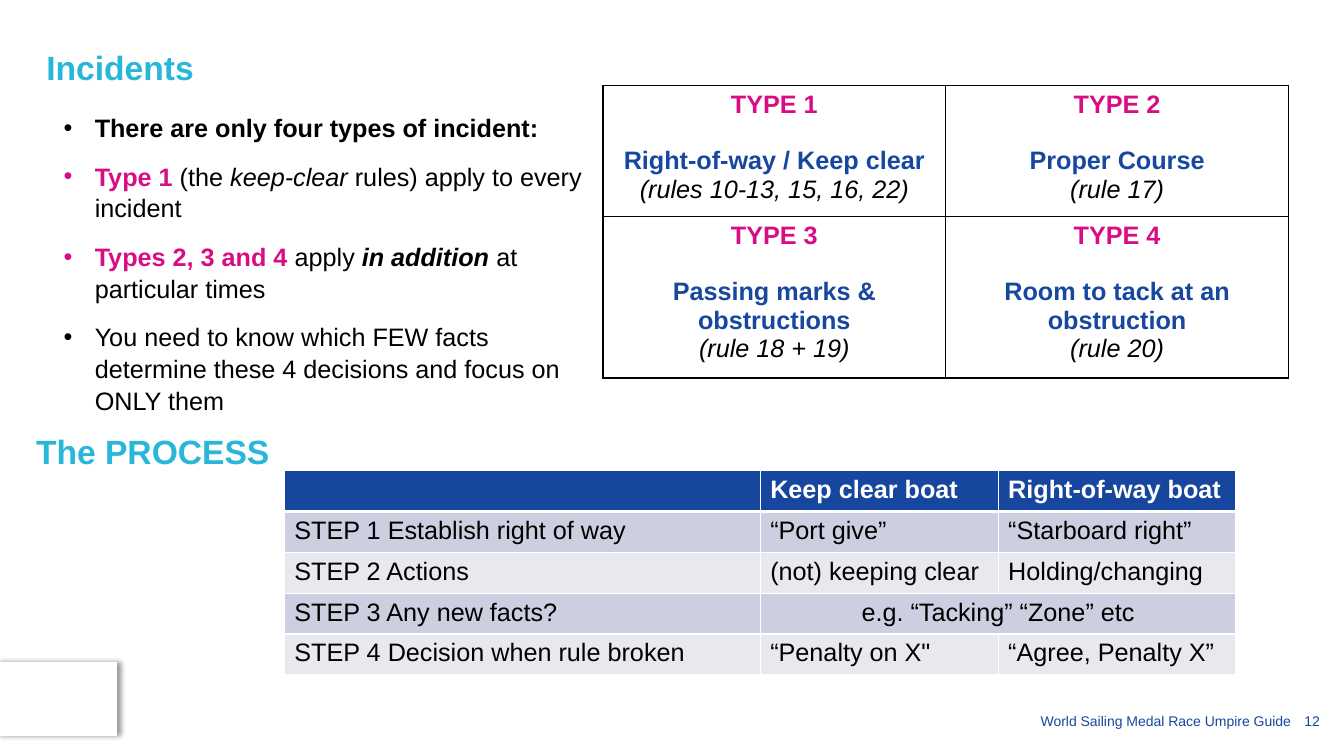
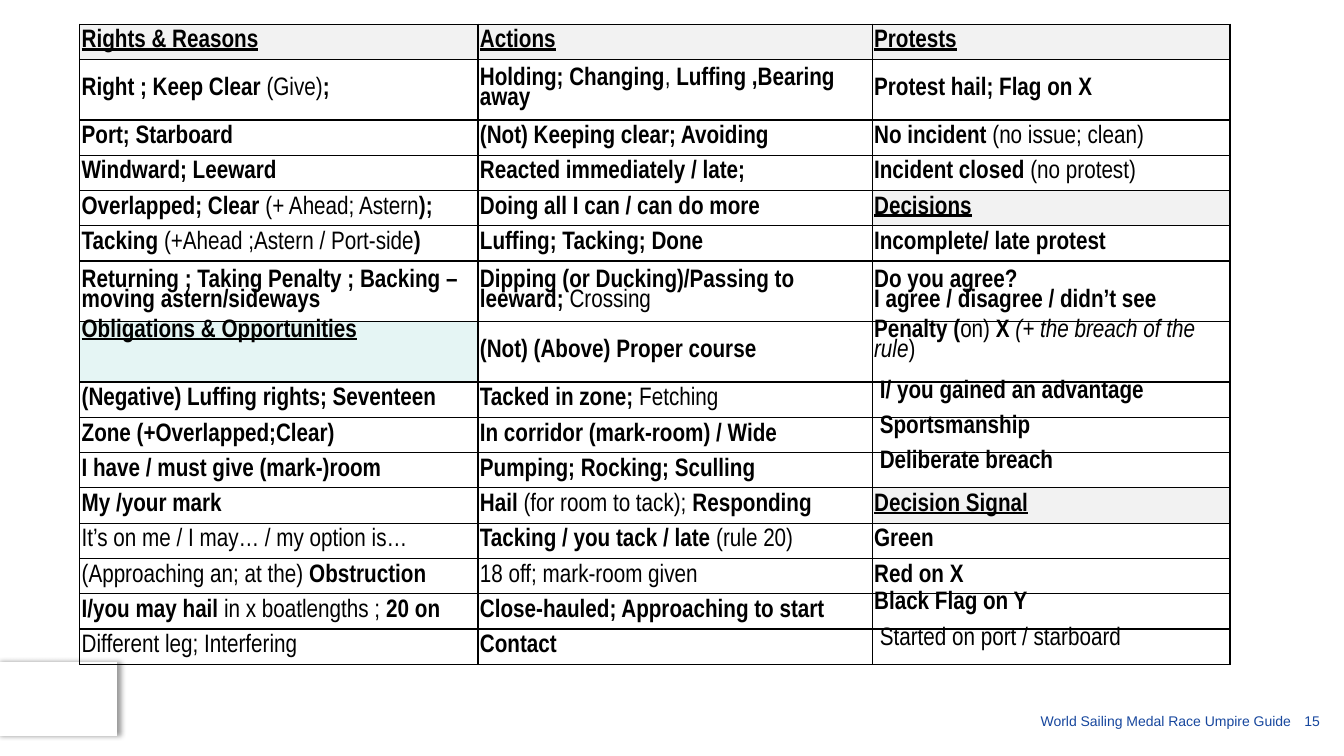
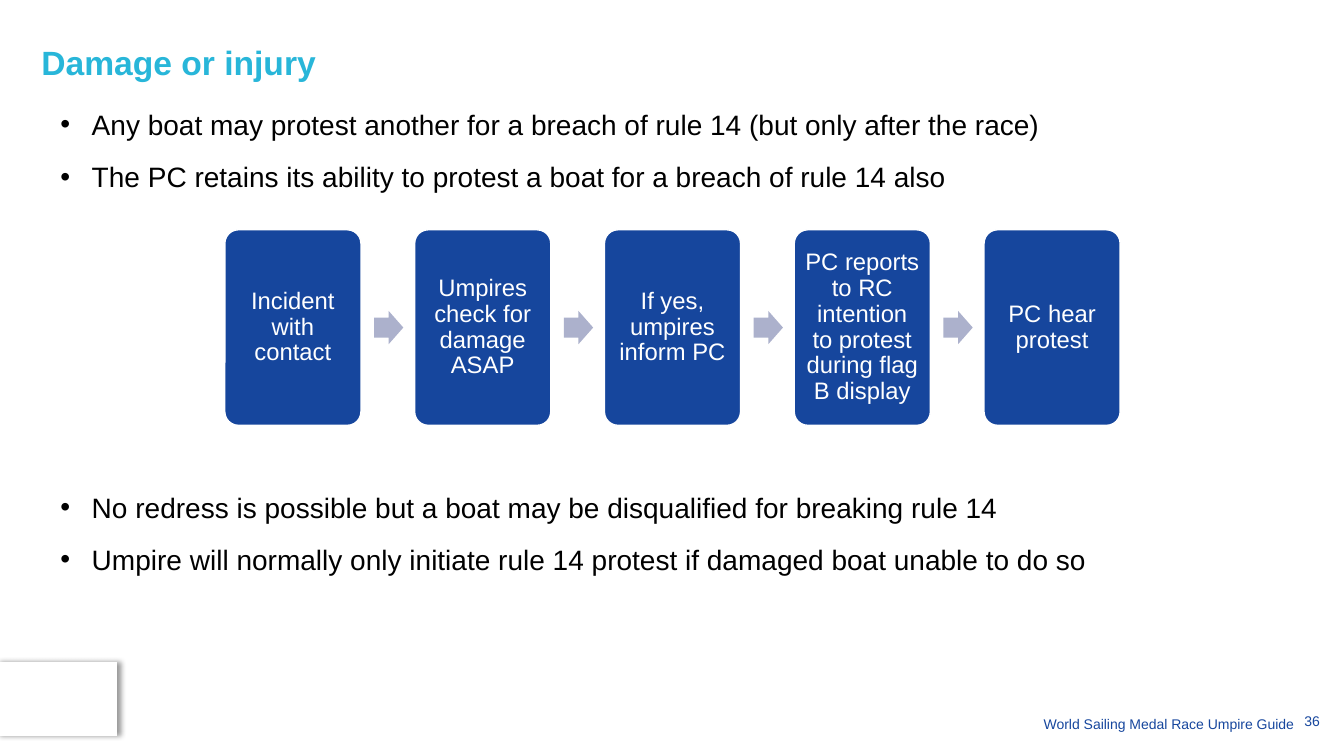
from lxml import etree
from pptx import Presentation
from pptx.dml.color import RGBColor
from pptx.enum.shapes import MSO_SHAPE
from pptx.enum.text import MSO_ANCHOR, MSO_AUTO_SIZE, PP_ALIGN
from pptx.oxml import parse_xml
from pptx.oxml.ns import nsdecls, qn
from pptx.util import Inches, Pt

# Shared look
BLACK, WHITE, NAVY, BLUE = "000000", "FFFFFF", "17479E", "16469D"
CYAN, PINK, ARROW_GREY = "28B6D9", "D80D86", "ACB1CC"
BAND_DARK, BAND_LIGHT = "CCCFDF", "E8E9EF"
HEADING_GREY, HEADING_MINT = "F2F2F2", "E5F5F4"
FOOTER = "World Sailing Medal Race Umpire Guide"
TITLE_AND_BODY, BLANK = 1, 6

# Content marks: * bold, _ italic, ~ underline, ^ pink, @ navy
INCIDENT_POINTS = [
    "*There are only four types of incident:*",
    "^*Type 1 *^(the _keep-clear _rules) apply to every incident",
    "^*Types 2, 3 and 4 *^apply *_in addition _*at particular times",
    "You need to know which FEW facts determine these 4 decisions and focus on ONLY them",
]
INCIDENT_TYPES = [
    ["^*TYPE 1*^\n@*Right-of-way / Keep clear*@\n_(rules 10-13, 15, 16, 22)_",
     "^*TYPE 2*^\n@*Proper Course*@\n_(rule 17)_"],
    ["^*TYPE 3*^\n@*Passing marks & obstructions*@\n_(rule 18 + 19)_",
     "^*TYPE 4*^\n@*Room to tack at an obstruction*@\n_(rule 20)_"],
]
PROCESS_STEPS = [
    ["", "*Keep clear boat*", "*Right-of-way boat*"],
    ["STEP 1 Establish right of way", "“Port give”", "“Starboard right”"],
    ["STEP 2 Actions", "(not) keeping clear", "Holding/changing"],
    ["STEP 3 Any new facts?", "e.g. “Tacking” “Zone” etc", ""],
    ["STEP 4 Decision when rule broken", "“Penalty on X\"", "“Agree, Penalty X”"],
]
VOCABULARY = [
    ["~*Rights & Reasons*~", "~*Actions*~", "~*Protests*~"],
    ["*Right ; Keep Clear *(Give)*;*", "*Holding; Changing*, *Luffing ,Bearing away*",
     "*Protest hail; Flag on X*"],
    ["*Port; Starboard*", "*(Not) Keeping clear; Avoiding*",
     "*No incident *(no issue; clean)"],
    ["*Windward; Leeward*", "*Reacted immediately / late;*",
     "*Incident closed *(no protest)"],
    ["*Overlapped; Clear *(+ Ahead; Astern*);*", "*Doing all I can / can do more*",
     "~*Decisions*~"],
    ["*Tacking *(+Ahead ;Astern / Port-side*)*", "*Luffing; Tacking; Done*",
     "*Incomplete/ late protest*"],
    ["*Returning ; Taking Penalty ; Backing –moving astern/sideways*",
     "*Dipping (or Ducking)/Passing to leeward; *Crossing",
     "*Do you agree?*\n*I agree / disagree / didn’t see*"],
    ["~*Obligations & Opportunities*~", "*(Not) (Above) Proper course*",
     "*Penalty (*on)* X *_(+ the breach of the rule_)"],
    ["*(Negative) Luffing rights; Seventeen*", "*Tacked in zone; *Fetching",
     "* I/ you gained an advantage*"],
    ["*Zone (+Overlapped;Clear)*", "*In corridor (mark-room) / Wide*", "* Sportsmanship*"],
    ["*I have / must give (mark-)room*", "*Pumping; Rocking; Sculling*",
     "* Deliberate breach*"],
    ["*My /your mark*", "*Hail* (for room to tack); *Responding*", "~*Decision Signal*~"],
    ["It’s on me / I may… / my option is…", "*Tacking / you tack / late* (rule 20)",
     "*Green*"],
    ["(Approaching an; at the) *Obstruction*", "18 off; mark-room given", "*Red on X*"],
    ["*I/you may hail *in x boatlengths ; *20 on*", "*Close-hauled; Approaching to start*",
     "*Black Flag on Y*"],
    ["Different leg; Interfering", "*Contact*", " Started on port / starboard"],
]
TWO_LINE_ROWS = {1, 6, 7}
OBLIGATIONS_CELL = (7, 0)
TOP_CELLS = {OBLIGATIONS_CELL} | {(row, 2) for row in (7, 8, 9, 10, 14, 15)}
DAMAGE_POINTS = [
    "Any boat may protest another for a breach of rule 14 (but only after the race)",
    "The PC retains its ability to protest a boat for a breach of rule 14 also",
    "No redress is possible but a boat may be disqualified for breaking rule 14",
    "Umpire will normally only initiate rule 14 protest if damaged boat unable to do so",
]
DAMAGE_STEPS = [
    "Incident with contact",
    "Umpires check for damage ASAP",
    "If yes, umpires inform PC",
    "PC reports to RC intention to protest during flag B display",
    "PC hear protest",
]


def rgb(value):
    return RGBColor.from_string(value)


def box(*lengths):
    return [Inches(length) for length in lengths]


# Text
def split_marks(text):
    """Yield (words, set of marks) pairs."""
    marks, words = set(), ""
    for letter in text:
        if letter in "*_~^@":
            if words:
                yield words, set(marks)
            marks ^= {letter}
            words = ""
        else:
            words += letter
    if words:
        yield words, marks


def write(frame, lines, size, color=BLACK, name="Arial", align=PP_ALIGN.LEFT,
          spacing=1.0, after=0):
    paragraphs = []
    for index, line in enumerate(lines):
        paragraph = frame.add_paragraph() if index else frame.paragraphs[0]
        paragraph.alignment = align
        paragraph.line_spacing = spacing
        paragraph.space_before, paragraph.space_after = Pt(0), Pt(after)
        paragraph.font.size, paragraph.font.name = Pt(size), name
        for words, marks in split_marks(line):
            run = paragraph.add_run()
            run.text = words
            font = run.font
            font.size, font.name = Pt(size), name
            font.bold, font.italic = "*" in marks, "_" in marks
            font.underline = "~" in marks
            font.color.rgb = rgb(PINK if "^" in marks else NAVY if "@" in marks else color)
        paragraphs.append(paragraph)
    return paragraphs


def place(shape, position):
    shape.left, shape.top, shape.width, shape.height = box(*position)
    shape.text_frame.word_wrap = True
    shape.text_frame.auto_size = MSO_AUTO_SIZE.NONE


def write_heading(shape, text, left, top):
    place(shape, (left, top, 11.24, 0.71))
    shape.text_frame.vertical_anchor = MSO_ANCHOR.MIDDLE
    write(shape.text_frame, [f"*{text}*"], 24, CYAN, spacing=0.9)


def write_bullets(shape, position, lines, size):
    place(shape, position)
    shape.text_frame.vertical_anchor = MSO_ANCHOR.TOP
    paragraphs = write(shape.text_frame, lines, size, spacing=1.05, after=12)
    for paragraph in paragraphs:
        properties = paragraph._p.get_or_add_pPr()
        properties.set("marL", str(Inches(0.31)))
        properties.set("indent", str(-Inches(0.31)))
    return paragraphs


# Slide frame
def add_slide(presentation, layout, number, shift=0):
    slide = presentation.slides.add_slide(presentation.slide_layouts[layout])
    plate = slide.shapes.add_shape(MSO_SHAPE.RECTANGLE, *box(-0.04, 6.57, 1.2, 0.73))
    plate.fill.solid()
    plate.fill.fore_color.rgb = rgb(WHITE)
    plate.line.fill.background()
    plate._element.spPr.append(parse_xml(
        f'<a:effectLst {nsdecls("a")}><a:outerShdw blurRad="{Pt(4)}" dist="{Pt(3)}" dir="0">'
        '<a:srgbClr val="000000"><a:alpha val="40000"/></a:srgbClr>'
        '</a:outerShdw></a:effectLst>'))
    for text, left, top, width in ((number, 12.79, 7.05, 0.4),
                                   (FOOTER, 8.4 + shift, 7.05 + shift, 4.5)):
        label = slide.shapes.add_textbox(*box(left, top, width, 0.21))
        label.text_frame.word_wrap = True
        label.text_frame.vertical_anchor = MSO_ANCHOR.MIDDLE
        write(label.text_frame, [text], 10, NAVY, align=PP_ALIGN.RIGHT)
    return slide


# Tables
def add_plain_table(slide, left, top, widths, heights):
    table = slide.shapes.add_table(
        len(heights), len(widths),
        *box(left, top, sum(widths), sum(heights))).table
    table.first_row = table.horz_banding = False
    for column, width in zip(table.columns, widths):
        column.width = Inches(width)
    for row, height in zip(table.rows, heights):
        row.height = Inches(height)
    return table


def style_cell(cell, border, fill=None, bottom=1):
    properties = cell._tc.get_or_add_tcPr()
    for side in "LRTB":
        line = etree.SubElement(properties, qn(f"a:ln{side}"),
                                w=str(Pt(bottom if side == "B" else 1)))
        solid = etree.SubElement(line, qn("a:solidFill"))
        etree.SubElement(solid, qn("a:srgbClr"), val=border)
    if fill:
        cell.fill.solid()
        cell.fill.fore_color.rgb = rgb(fill)
    else:
        cell.fill.background()


def cells_of(table, content):
    for row, texts in enumerate(content):
        for column, text in enumerate(texts):
            yield row, column, table.cell(row, column), text


# Slides
def build_incidents(presentation):
    slide = add_slide(presentation, TITLE_AND_BODY, "12")
    write_heading(slide.shapes.title, "Incidents", 0.36, 0.34)
    write_bullets(slide.placeholders[1], (0.53, 1.05, 5.48, 3.5), INCIDENT_POINTS, 18)

    types = add_plain_table(slide, 5.98, 0.85, [3.4, 3.4], [1.3, 1.6])
    for row, column, cell, text in cells_of(types, INCIDENT_TYPES):
        style_cell(cell, BLACK)
        paragraphs = write(cell.text_frame, text.split("\n"), 18, align=PP_ALIGN.CENTER)
        paragraphs[1].space_before = Pt(20)

    write_heading(slide.shapes.add_textbox(0, 0, 0, 0), "The PROCESS", 0.26, 4.14)
    steps = add_plain_table(slide, 2.82, 4.67, [4.72, 2.36, 2.36],
                            [0.405] * len(PROCESS_STEPS))
    for row, column, cell, text in cells_of(steps, PROCESS_STEPS):
        header = row == 0
        fill = BLUE if header else BAND_DARK if row % 2 else BAND_LIGHT
        style_cell(cell, WHITE, fill, bottom=3 if header else 1)
        write(cell.text_frame, [text], 18, WHITE if header else BLACK)
    steps.cell(3, 1).merge(steps.cell(3, 2))
    steps.cell(3, 1).text_frame.paragraphs[0].alignment = PP_ALIGN.CENTER


def build_vocabulary(presentation):
    slide = add_slide(presentation, BLANK, "15")
    heights = [0.6 if row in TWO_LINE_ROWS else 0.35 for row in range(len(VOCABULARY))]
    table = add_plain_table(slide, 0.79, 0.24, [3.95, 3.91, 3.55], heights)
    for row, column, cell, text in cells_of(table, VOCABULARY):
        fill = HEADING_GREY if text.startswith("~") else None
        if (row, column) == OBLIGATIONS_CELL:
            fill = HEADING_MINT
        style_cell(cell, BLACK, fill)
        cell.margin_left = cell.margin_right = Inches(0.02)
        cell.margin_top = cell.margin_bottom = 0
        top = (row, column) in TOP_CELLS
        cell.vertical_anchor = MSO_ANCHOR.TOP if top else MSO_ANCHOR.MIDDLE
        write(cell.text_frame, text.split("\n"), 18, name="Arial Narrow", spacing=0.85)


def add_flow_shape(slide, kind, position, fill, adjustment):
    shape = slide.shapes.add_shape(kind, *box(*position))
    shape.shadow.inherit = False
    shape.adjustments[0] = adjustment
    shape.fill.solid()
    shape.fill.fore_color.rgb = rgb(fill)
    shape.line.fill.background()
    return shape


def build_damage(presentation):
    slide = add_slide(presentation, TITLE_AND_BODY, "36", shift=0.03)
    write_heading(slide.shapes.title, "Damage or injury", 0.31, 0.29)
    points = write_bullets(slide.placeholders[1], (0.5, 1, 12, 5.22), DAMAGE_POINTS, 20)
    points[2].space_before = Pt(199)  # room for the flow

    left, top, width, height, pitch = 2.23, 2.28, 1.35, 1.94, 7.53 / 4
    arrow_width, arrow_height = 0.29, 0.33
    for index, text in enumerate(DAMAGE_STEPS):
        x = left + index * pitch
        step = add_flow_shape(slide, MSO_SHAPE.ROUNDED_RECTANGLE,
                              (x, top, width, height), BLUE, 0.1)
        step.line.color.rgb = rgb(WHITE)
        step.line.width = Pt(1)
        frame = step.text_frame
        frame.word_wrap = True
        frame.vertical_anchor = MSO_ANCHOR.MIDDLE
        frame.margin_left = frame.margin_right = Inches(0.07)
        frame.margin_top = frame.margin_bottom = Inches(0.07)
        write(frame, [text], 17, WHITE, align=PP_ALIGN.CENTER, spacing=0.9)
        if index < len(DAMAGE_STEPS) - 1:
            add_flow_shape(slide, MSO_SHAPE.RIGHT_ARROW,
                           (x + width + 0.13, top + (height - arrow_height) / 2,
                            arrow_width, arrow_height), ARROW_GREY, 0.6)


def main():
    presentation = Presentation()
    presentation.slide_width, presentation.slide_height = box(13.33, 7.5)
    build_incidents(presentation)
    build_vocabulary(presentation)
    build_damage(presentation)
    presentation.save("out.pptx")


if __name__ == "__main__":
    main()
